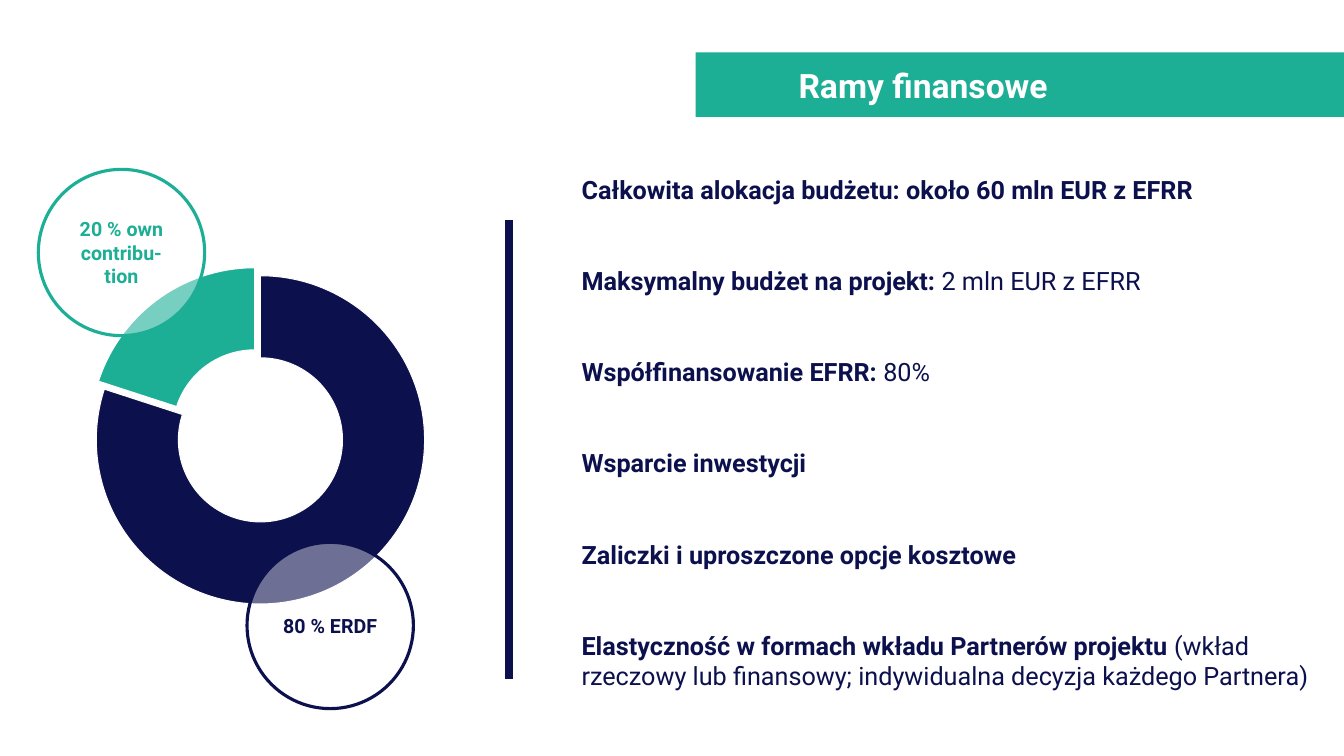
import pptx
import pptx.chart.data
import pptx.dml.color
import pptx.enum.chart
import pptx.enum.shapes
import pptx.enum.text
import pptx.oxml
import pptx.oxml.ns
import pptx.util

COLORS = {"navy": "0C114D", "teal": "1CAF96", "white": "FFFFFF", "black": "000000"}
WIDTH, HEIGHT = 13.33, 7.5
CIRCLE = 1.65
ALIGN = pptx.enum.text.PP_ALIGN
ANCHOR = pptx.enum.text.MSO_ANCHOR

BUDGET_POINTS = [
    ("Całkowita alokacja budżetu: około 60 mln EUR z EFRR", ""),
    ("Maksymalny budżet na projekt:", " 2 mln EUR z EFRR"),
    ("Współfinansowanie EFRR:", " 80%"),
    ("Wsparcie inwestycji", ""),
    ("Zaliczki i uproszczone opcje kosztowe", ""),
    ("Elastyczność w formach wkładu Partnerów projektu ",
     "(wkład rzeczowy lub finansowy; indywidualna decyzja każdego Partnera)"),
]


def rgb(name):
    return pptx.dml.color.RGBColor.from_string(COLORS[name])


def box(*lengths):
    return [pptx.util.Inches(length) for length in lengths]


def xml(tag, attributes="", content=""):
    return pptx.oxml.parse_xml(
        f'<{tag} {pptx.oxml.ns.nsdecls("a", "c")} {attributes}>{content}</{tag}>')


def add_text(p, text, *, size, color, bold=True, font="Roboto", align=ALIGN.LEFT):
    p.alignment = align
    r = p.add_run()
    r.text = text
    r.font.name, r.font.size, r.font.bold = font, pptx.util.Pt(size), bold
    r.font.color.rgb = rgb(color)


def add_title(s, text):
    """Turn the title placeholder into a rounded banner that bleeds off the right edge."""
    sp = s.shapes.title
    sp.left, sp.top, sp.width, sp.height = box(6.9, 0.52, 6.82, 0.64)
    sp._element.spPr.append(xml("a:prstGeom", 'prst="roundRect"', "<a:avLst/>"))
    sp.fill.solid()
    sp.fill.fore_color.rgb = rgb("teal")
    tf = sp.text_frame
    tf.auto_size = pptx.enum.text.MSO_AUTO_SIZE.NONE
    tf.word_wrap = True
    tf.vertical_anchor = ANCHOR.MIDDLE
    tf.margin_left, tf.margin_top, tf.margin_right, tf.margin_bottom = box(1.02, 0.05, 0.1, 0.05)
    add_text(tf.paragraphs[0], text, size=24, color="white")


def add_budget_points(s, points):
    tf = s.shapes.add_textbox(*box(5.67, 1.68, 7.47, 5.64)).text_frame
    tf.word_wrap = True
    for i, (lead, detail) in enumerate(points):
        p = tf.add_paragraph() if i else tf.paragraphs[0]
        if i:
            p.space_before = pptx.util.Pt(43.5)
        add_text(p, lead, size=18, color="navy")
        if detail:
            add_text(p, detail, size=18, color="navy", bold=False)


def add_doughnut(s, shares):
    data = pptx.chart.data.CategoryChartData()
    data.categories = [str(i + 1) for i in range(len(shares))]
    data.add_series("Series 1", [value for value, _ in shares])
    chart = s.shapes.add_chart(pptx.enum.chart.XL_CHART_TYPE.DOUGHNUT,
                               *box(0.68, 2.51, 3.75, 3.63), data).chart
    chart.has_legend = chart.has_title = False
    chart.font.name, chart.font.size = "Lato", pptx.util.Pt(10)
    chart.font.color.rgb = rgb("black")
    plot = chart.plots[0]
    plot.vary_by_categories = True
    plot.has_data_labels = False
    series = plot.series[0]
    for i, (_, color) in enumerate(shares):
        part = series.points[i].format
        part.fill.solid()
        part.fill.fore_color.rgb = rgb(color)
        part.line.color.rgb = rgb("white")
        part.line.width = pptx.util.Pt(0.75)
    first = series._element.find(pptx.oxml.ns.qn("c:dPt"))
    first.addprevious(xml("c:explosion", 'val="6"'))


def add_circle(s, left, top, text, color):
    """Add a translucent white circle with a coloured outline and label."""
    sp = s.shapes.add_shape(pptx.enum.shapes.MSO_SHAPE.OVAL, *box(left, top, CIRCLE, CIRCLE))
    sp.shadow.inherit = False
    sp.fill.solid()
    sp.fill.fore_color.rgb = rgb("white")
    white = sp._element.spPr.find(".//" + pptx.oxml.ns.qn("a:srgbClr"))
    white.append(xml("a:alpha", 'val="40000"'))
    sp.line.color.rgb = rgb(color)
    sp.line.width = pptx.util.Pt(2.25)
    tf = sp.text_frame
    tf.word_wrap = True
    tf.vertical_anchor = ANCHOR.MIDDLE
    add_text(tf.paragraphs[0], text, size=14, color=color, align=ALIGN.CENTER)


def add_divider(s, x, top, bottom):
    line = s.shapes.add_connector(pptx.enum.shapes.MSO_CONNECTOR.STRAIGHT,
                                  *box(x, top, x, bottom))
    line.line.color.rgb = rgb("navy")
    line.line.width = pptx.util.Pt(6)
    line._element.spPr.append(xml("a:effectLst"))


def main():
    prs = pptx.Presentation()
    prs.slide_width, prs.slide_height = box(WIDTH, HEIGHT)
    s = prs.slides.add_slide(prs.slide_layouts[5])
    add_title(s, "Ramy finansowe")
    add_budget_points(s, BUDGET_POINTS)
    add_doughnut(s, [(80, "navy"), (20, "teal")])
    add_circle(s, 0.38, 1.68, "20 % own contribu-tion", "teal")
    add_circle(s, 2.45, 5.38, "80 % ERDF", "navy")
    add_divider(s, 5.05, 2.18, 6.74)
    prs.save("out.pptx")


if __name__ == "__main__":
    main()
